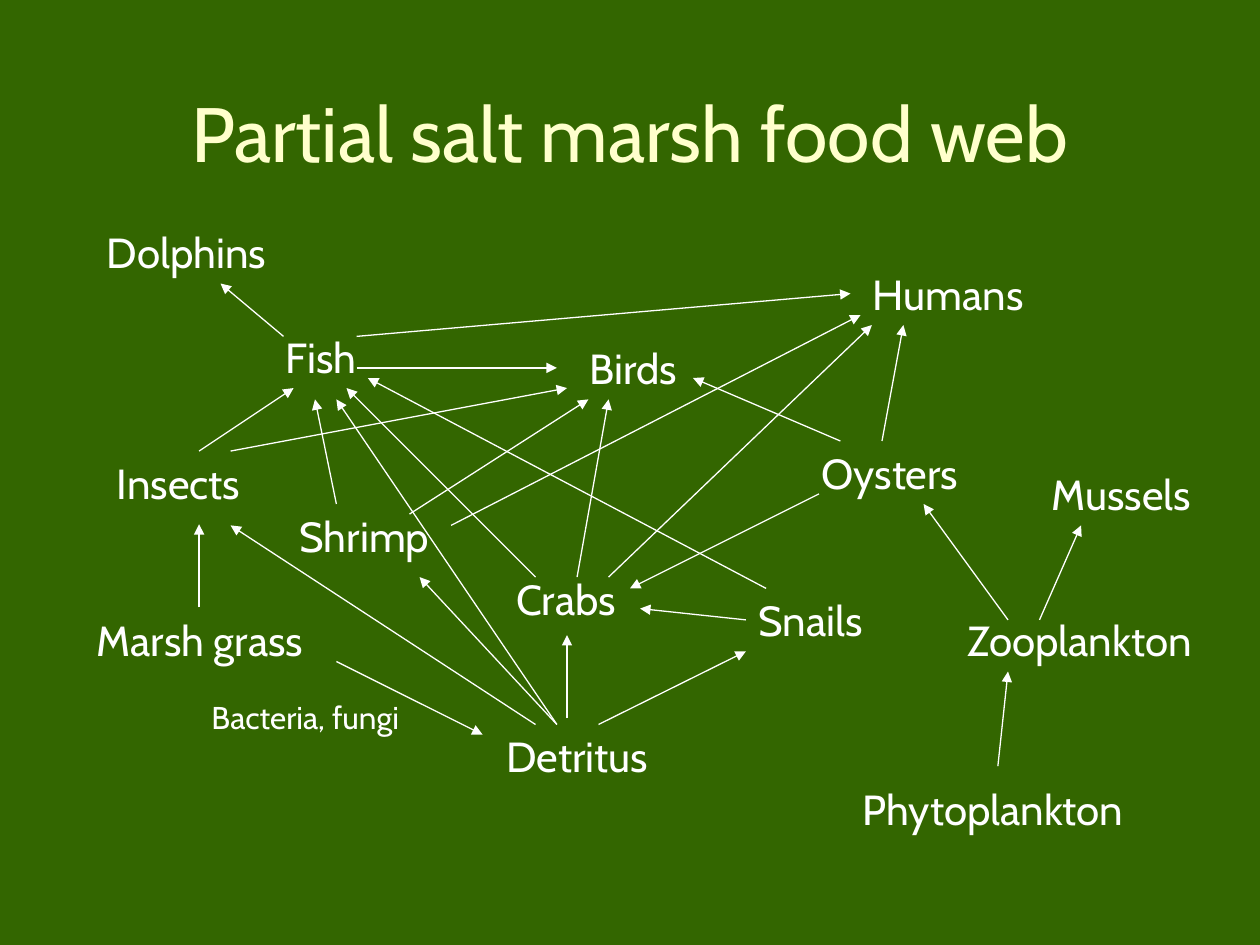
from pptx import Presentation
from pptx.dml.color import RGBColor
from pptx.enum.shapes import MSO_CONNECTOR
from pptx.enum.text import MSO_ANCHOR, MSO_AUTO_SIZE, PP_ALIGN
from pptx.oxml.ns import qn
from pptx.util import Inches, Pt
from lxml import etree

GREEN = RGBColor(0x33, 0x66, 0x00)
CREAM = RGBColor(0xFF, 0xFF, 0xCC)
WHITE = RGBColor(0xFF, 0xFF, 0xFF)
STRAIGHT = MSO_CONNECTOR.STRAIGHT
MIDDLE = MSO_ANCHOR.MIDDLE
CENTER = PP_ALIGN.CENTER
FIT_SHAPE = MSO_AUTO_SIZE.SHAPE_TO_FIT_TEXT

# Species: name, left, top, width
SPECIES = [
    ("Dolphins", 0.75, 1.75, 1.67),
    ("Humans", 6.83, 2.08, 2.08),
    ("Fish", 2.17, 2.58, 2.08),
    ("Birds", 4.58, 2.67, 2.08),
    ("Oysters", 6.42, 3.5, 1.42),
    ("Insects", 0.83, 3.58, 1.5),
    ("Mussels", 8.25, 3.67, 1.5),
    ("Shrimp", 2.28, 4, 1.25),
    ("Crabs", 4, 4.5, 1.17),
    ("Snails", 5.92, 4.67, 1.17),
    ("Marsh grass", 0.67, 4.83, 2.08),
    ("Zooplankton", 7.58, 4.83, 2.08),
    ("Detritus", 3.92, 5.75, 2.08),
    ("Phytoplankton", 6.75, 6.17, 2.33),
]

# Energy flows by food source: x1, y1, x2, y2
FLOWS = {
    "Marsh grass": [(2.67, 5.25, 3.83, 5.83), (1.58, 4.82, 1.58, 4.16)],
    "Detritus": [(4.5, 5.7, 4.5, 5.04), (4.75, 5.75, 5.92, 5.17),
                 (4.25, 5.75, 1.83, 4.17), (4.42, 5.75, 3.33, 4.58),
                 (4.42, 5.75, 2.67, 3.17)],
    "Insects": [(1.58, 3.58, 2.33, 3.08), (1.83, 3.58, 4.5, 3.08)],
    "Shrimp": [(2.67, 4, 2.5, 3.17), (3.25, 4.08, 4.67, 3.17),
               (3.58, 4.17, 6.83, 2.5)],
    "Crabs": [(4.25, 4.58, 2.75, 3.08), (4.58, 4.58, 4.83, 3.17),
              (4.83, 4.58, 6.92, 2.58)],
    "Snails": [(6.08, 4.67, 2.92, 3), (5.92, 4.92, 5.08, 4.83)],
    "Phytoplankton": [(7.92, 6.08, 8, 5.33)],
    "Zooplankton": [(8, 4.92, 7.33, 4), (8.25, 4.92, 8.58, 4.17)],
    "Oysters": [(6.67, 3.5, 5.5, 3), (7, 3.5, 7.17, 2.58),
                (6.5, 3.92, 5, 4.67)],
    "Fish": [(2.25, 2.67, 1.75, 2.25), (2.83, 2.67, 6.75, 2.33),
             (2.83, 2.92, 4.42, 2.92)],
}


class FoodWeb:
    font = "Cabin"

    def __init__(self, s):
        self.s = s
        s.background.fill.solid()
        s.background.fill.fore_color.rgb = GREEN

    def style(self, p, size, color):
        p.font.name = self.font
        p.font.size = Pt(size)
        p.font.color.rgb = color

    def title(self, text, x, y, w, h):
        sp = self.s.shapes.title
        sp.left, sp.top, sp.width, sp.height = map(Inches, (x, y, w, h))
        tf = sp.text_frame
        tf.text = text
        tf.vertical_anchor = MIDDLE
        p = tf.paragraphs[0]
        p.alignment = CENTER
        self.style(p, 44, CREAM)

    def label(self, text, x, y, w, h=0.5, size=24):
        sp = self.s.shapes.add_textbox(*map(Inches, (x, y, w, h)))
        tf = sp.text_frame
        tf.word_wrap = True
        tf.auto_size = FIT_SHAPE
        tf.text = text
        self.style(tf.paragraphs[0], size, WHITE)

    def arrow(self, x1, y1, x2, y2):
        c = self.s.shapes.add_connector(STRAIGHT, *map(Inches, (x1, y1, x2, y2)))
        c.line.color.rgb = WHITE
        c.line.width = Pt(0.75)
        etree.SubElement(c.line._get_or_add_ln(), qn("a:tailEnd"), type="triangle")
        etree.SubElement(c._element.spPr, qn("a:effectLst"))


def main():
    prs = Presentation()
    prs.slide_width, prs.slide_height = Inches(10), Inches(7.5)
    web = FoodWeb(prs.slides.add_slide(prs.slide_layouts[5]))

    web.title("Partial salt marsh food web", 0.75, 0.42, 8.5, 1.25)

    # Labels
    for species in SPECIES:
        web.label(*species)
    web.label("Bacteria, fungi", 1.58, 5.49, 2.08, h=0.4, size=18)

    # Arrows from food to consumer
    for flows in FLOWS.values():
        for flow in flows:
            web.arrow(*flow)

    prs.save("out.pptx")


if __name__ == "__main__":
    main()
